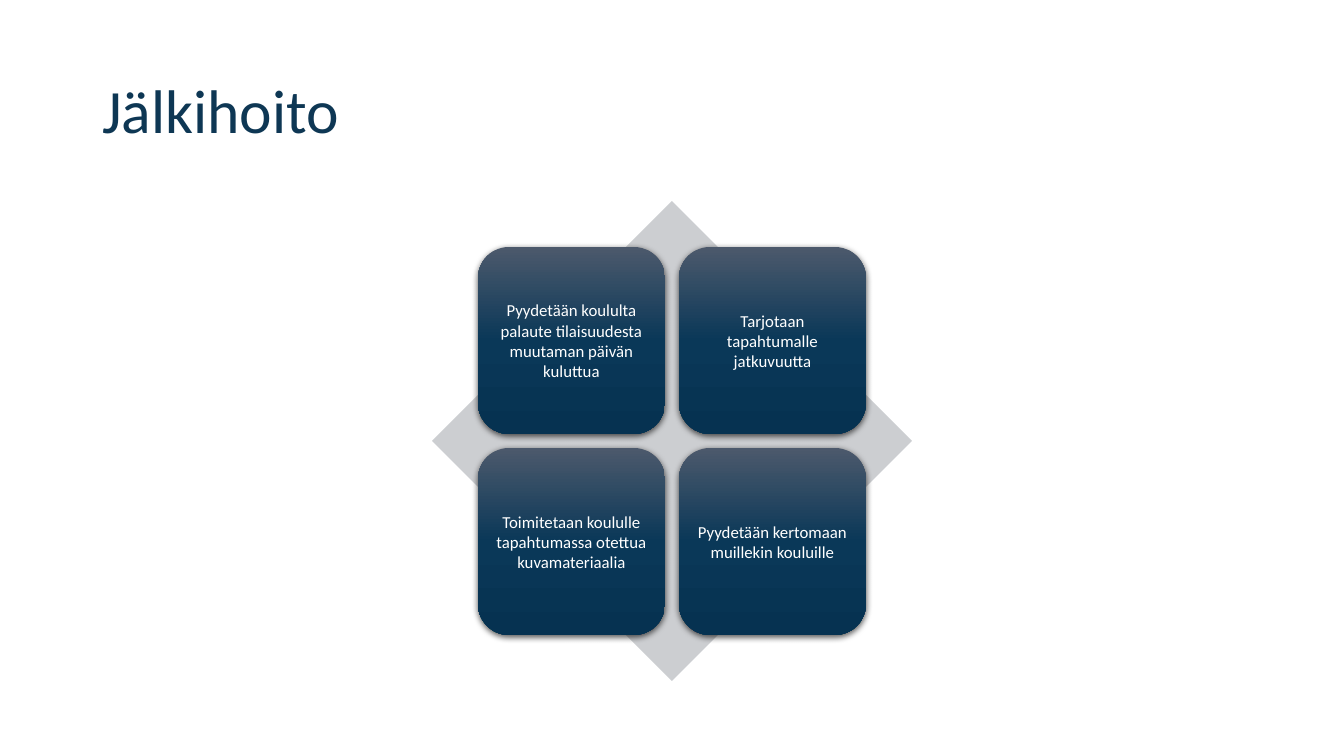
from copy import deepcopy

from lxml import etree
from pptx import Presentation
from pptx import util as u
from pptx.dml.color import RGBColor
from pptx.enum import shapes, text
from pptx.oxml.ns import qn

TITLE = "Jälkihoito"
CARDS = [
    "Pyydetään koululta palaute tilaisuudesta muutaman päivän kuluttua",
    "Tarjotaan tapahtumalle jatkuvuutta",
    "Toimitetaan koululle tapahtumassa otettua kuvamateriaalia",
    "Pyydetään kertomaan muillekin kouluille",
]

NAVY = RGBColor(0x0E, 0x37, 0x54)
WHITE = RGBColor(0xFF, 0xFF, 0xFF)
GREY = RGBColor(0xCC, 0xCE, 0xD1)
CARD_STOPS = [
    (0, RGBColor(0x4C, 0x59, 0x6C)),
    (0.5, RGBColor(0x0A, 0x38, 0x58)),
    (1, RGBColor(0x06, 0x32, 0x51)),
]
TITLE_FONT = {"name": "Calibri", "size": u.Pt(44), "bold": False}
CARD_FONT = {"name": "Calibri", "size": u.Pt(12)}

EMU_PER_PX = 914400 / 100.8
CENTER_X, CENTER_Y = 672, 441
DIAMOND_SIZE = 480
CARD_SIZE, CARD_GAP, CARD_INSET = 187, 14, 5
COLUMNS = 2


def px(*lengths):
    return [u.Emu(round(length * EMU_PER_PX)) for length in lengths]


def format_text(frame, content, font_values, color, alignment):
    frame.text = content
    frame.word_wrap = True
    frame.vertical_anchor = text.MSO_ANCHOR.MIDDLE
    paragraph = frame.paragraphs[0]
    paragraph.alignment = alignment
    font = paragraph.runs[0].font
    for name, value in font_values.items():
        setattr(font, name, value)
    font.color.rgb = color
    return paragraph


def fill_gradient(shape):
    fill = shape.fill
    fill.gradient()
    fill.gradient_angle = 270
    stop_list = shape.element.spPr.find(".//" + qn("a:gsLst"))
    stop_list.append(deepcopy(stop_list[-1]))
    for stop, (position, color) in zip(fill.gradient_stops, CARD_STOPS):
        stop.position = position
        stop.color.rgb = color


def add_shadow(shape):
    effects = shape.element.spPr.find(qn("a:effectLst"))
    shadow = etree.SubElement(
        effects, qn("a:outerShdw"),
        blurRad=str(u.Pt(4.5)), dist=str(u.Pt(1.5)), dir="5400000", rotWithShape="0",
    )
    color = etree.SubElement(shadow, qn("a:srgbClr"), val="000000")
    etree.SubElement(color, qn("a:alpha"), val="63000")


def add_plain_shape(group, kind, left, top, size):
    shape = group.shapes.add_shape(kind, *px(left, top, size, size))
    shape.shadow.inherit = False
    shape.line.fill.background()
    return shape


def add_card(group, content, left, top):
    card = add_plain_shape(group, shapes.MSO_SHAPE.ROUNDED_RECTANGLE, left, top, CARD_SIZE)
    fill_gradient(card)
    add_shadow(card)
    frame = card.text_frame
    for side in ("left", "top", "right", "bottom"):
        setattr(frame, f"margin_{side}", px(CARD_INSET)[0])
    format_text(frame, content, CARD_FONT, WHITE, text.PP_ALIGN.CENTER)


def main():
    presentation = Presentation()
    presentation.slide_width, presentation.slide_height = px(1344, 756)
    slide = presentation.slides.add_slide(presentation.slide_layouts[5])

    title = slide.shapes.title
    title.left, title.top, title.width, title.height = px(92, 41, 1159, 146)
    paragraph = format_text(title.text_frame, TITLE, TITLE_FONT, NAVY, text.PP_ALIGN.LEFT)
    paragraph.line_spacing = 0.9

    matrix = slide.shapes.add_group_shape()
    half = DIAMOND_SIZE // 2
    diamond = add_plain_shape(
        matrix, shapes.MSO_SHAPE.DIAMOND, CENTER_X - half, CENTER_Y - half, DIAMOND_SIZE
    )
    diamond.fill.solid()
    diamond.fill.fore_color.rgb = GREY

    step = CARD_SIZE + CARD_GAP
    offset = CARD_SIZE + CARD_GAP // 2
    for index, content in enumerate(CARDS):
        row, column = divmod(index, COLUMNS)
        add_card(
            matrix, content,
            CENTER_X - offset + column * step, CENTER_Y - offset + row * step,
        )

    presentation.save("out.pptx")


if __name__ == "__main__":
    main()
